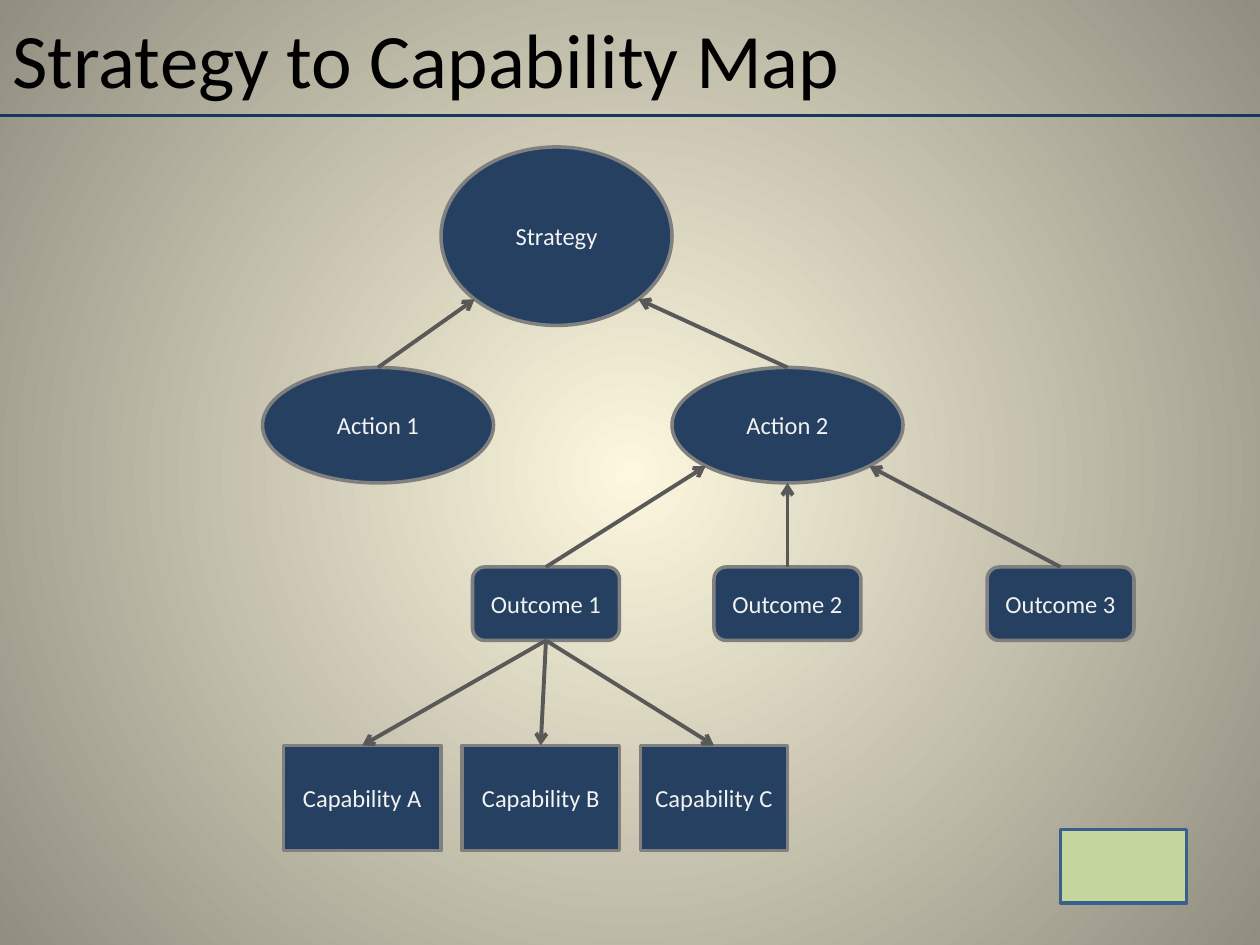
import pptx
import pptx.util
import pptx.dml.color
import pptx.enum.shapes
import pptx.enum.text
import pptx.oxml
import pptx.oxml.ns
import lxml.etree

PX = 7620  # EMU per px, 120 px to the inch
COLORS = {
    "glow": "FCF7DD", "edge": "918E81", "black": "000000", "rule": "17375E",
    "node": "254061", "border": "808080", "label": "F2F2F2", "link": "595959",
    "badge": "C3D69B", "badge_border": "3A5F8C",
}
RGB = {name: pptx.dml.color.RGBColor.from_string(c) for name, c in COLORS.items()}
SHAPES = pptx.enum.shapes.MSO_SHAPE
qn = pptx.oxml.ns.qn

deck = pptx.Presentation()
deck.slide_width, deck.slide_height = 1200 * PX, 900 * PX
slide = deck.slides.add_slide(deck.slide_layouts[6])


def add_node(kind, box, label="", fill="node", border="border"):
    node = slide.shapes.add_shape(kind, *[v * PX for v in box])
    node.shadow.inherit = False
    node.fill.solid()
    node.fill.fore_color.rgb = RGB[fill]
    node.line.color.rgb = RGB[border]
    node.line.width = pptx.util.Pt(2)
    frame = node.text_frame
    frame.text = label
    frame.word_wrap = True
    frame.vertical_anchor = pptx.enum.text.MSO_ANCHOR.MIDDLE
    frame.paragraphs[0].alignment = pptx.enum.text.PP_ALIGN.CENTER
    for run in frame.paragraphs[0].runs:
        run.font.name, run.font.size = "Calibri", pptx.util.Pt(14)
        run.font.color.rgb = RGB["label"]


def add_line(start, end, color="link", arrow=True):
    line = slide.shapes.add_connector(
        pptx.enum.shapes.MSO_CONNECTOR.STRAIGHT, *[v * PX for v in (*start, *end)])
    line.line.color.rgb = RGB[color]
    line.line.width = pptx.util.Pt(2.25)
    if arrow:
        outline = line.line._get_or_add_ln()
        lxml.etree.SubElement(outline, qn("a:tailEnd"), type="arrow")
    lxml.etree.SubElement(line._element.spPr, qn("a:effectLst"))


# Background: radial glow from the centre
background = slide.background.fill
background.gradient()
for stop, color in zip(background.gradient_stops, ("glow", "edge")):
    stop.color.rgb = RGB[color]
gradient = slide.element.find(".//" + qn("a:gradFill"))
gradient.remove(gradient.find(qn("a:lin")))
circle = lxml.etree.SubElement(gradient, qn("a:path"), path="circle")
lxml.etree.SubElement(circle, qn("a:fillToRect"),
                      l="50000", t="50000", r="50000", b="50000")

# Title and rule
title = slide.shapes.add_textbox(0, 0, 1200 * PX, 110 * PX).text_frame
title.word_wrap = True
title.vertical_anchor = pptx.enum.text.MSO_ANCHOR.MIDDLE
title.text = "Strategy to Capability Map"
title_font = title.paragraphs[0].runs[0].font
title_font.name, title_font.size = "Calibri", pptx.util.Pt(44)
title_font.color.rgb = RGB["black"]
add_line((0, 110), (1200, 110), color="rule", arrow=False)

# Strategy and its actions
add_node(SHAPES.OVAL, (420, 140, 220, 170), "Strategy")
for label, left, target in (("Action 1", 250, 452), ("Action 2", 640, 608)):
    add_node(SHAPES.OVAL, (left, 350, 220, 110), label)
    add_line((left + 110, 350), (target, 285))

# Outcomes leading up to Action 2
for label, left, target in (("Outcome 1", 450, (672, 444)),
                            ("Outcome 2", 680, (750, 460)),
                            ("Outcome 3", 940, (828, 444))):
    add_node(SHAPES.FLOWCHART_ALTERNATE_PROCESS, (left, 540, 140, 70), label)
    add_line((left + 70, 540), target)

# Capabilities under Outcome 1
for label, left, width in (("Capability A", 270, 150),
                           ("Capability B", 440, 150),
                           ("Capability C", 610, 140)):
    add_node(SHAPES.RECTANGLE, (left, 710, width, 100), label)
    add_line((520, 610), (left + width // 2, 710))

# Plain corner badge
add_node(SHAPES.RECTANGLE, (1010, 790, 120, 70), fill="badge", border="badge_border")

deck.save("out.pptx")
